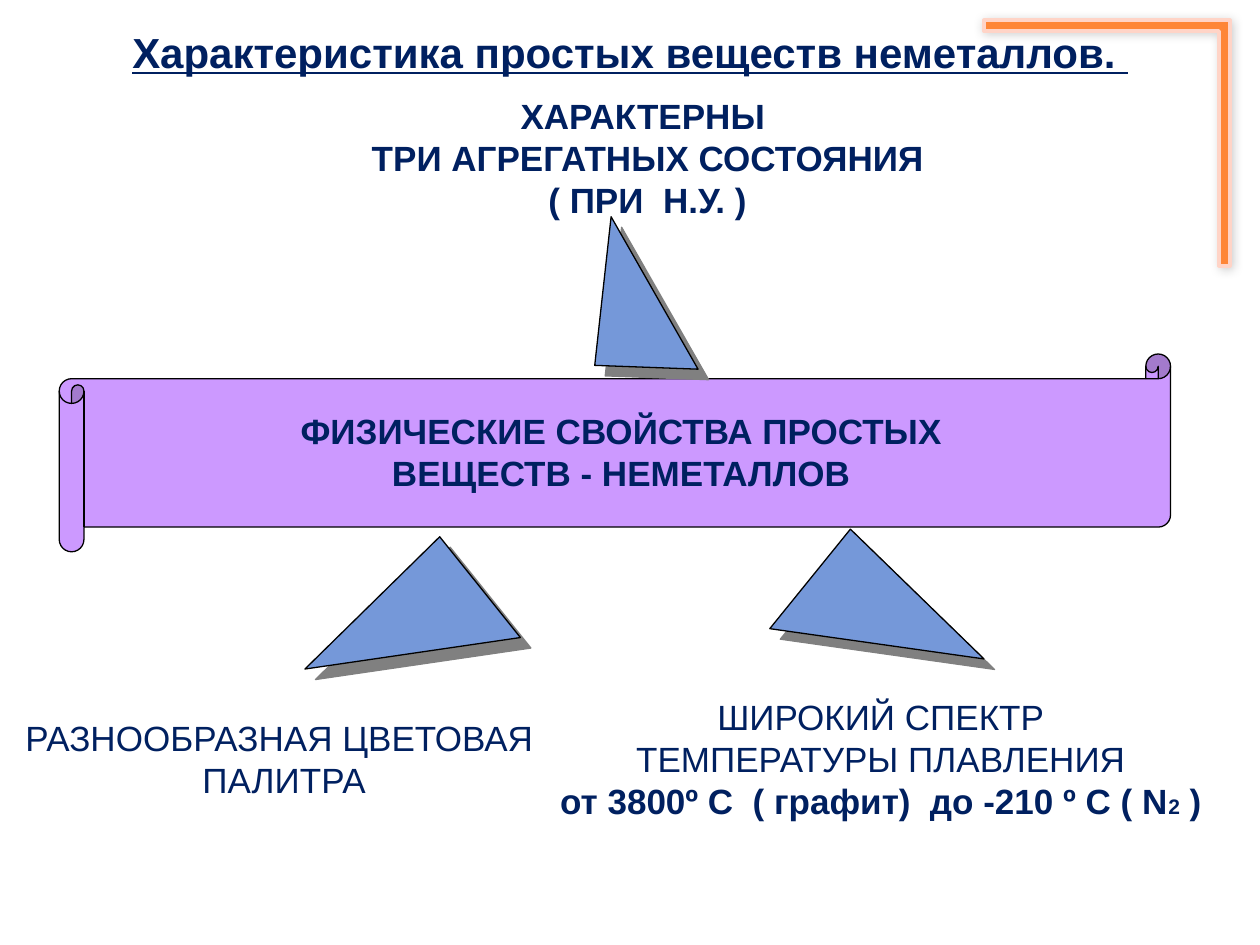
from lxml.etree import SubElement
from pptx import Presentation
from pptx.dml.color import RGBColor
from pptx.enum.shapes import MSO_SHAPE as Preset
from pptx.enum.text import MSO_AUTO_SIZE as AutoSize, PP_ALIGN as Align
from pptx.oxml.ns import qn
from pptx.util import Inches, Pt

CELL = 0.1  # inches: the slide is a grid of 100 columns by 75 rows
NAVY, BLUE, LILAC, ORANGE, PINK = "002060", "7598D9", "CC99FF", "FE8637", "FFD4C7"
BLACK, GRAY = "000000", "808080"


def color(value):
    return RGBColor.from_string(value)


def grid(*cells):
    return [Inches(cell * CELL) for cell in cells]


class SlideStyle:
    font = "Arial"
    size = 20

    def __init__(self, slide):
        self.shapes = slide.shapes

    def paint(self, shape, fill, line, width=0.75):
        shape.shadow.inherit = False
        shape.fill.solid()
        shape.fill.fore_color.rgb = color(fill)
        shape.line.color.rgb = color(line)
        shape.line.width = Pt(width)
        return shape

    def cast_shadow(self, shape, tone, opacity, blur, distance):
        effects = shape.element.spPr.find(qn("a:effectLst"))
        outer = SubElement(effects, qn("a:outerShdw"), blurRad=str(Pt(blur)),
                           dist=str(Pt(distance)), dir=str(45 * 60000),
                           algn="ctr", rotWithShape="0")
        tint = SubElement(outer, qn("a:srgbClr"), val=tone)
        SubElement(tint, qn("a:alpha"), val=str(opacity * 1000))

    def scroll(self, place, curl):
        shape = self.shapes.add_shape(Preset.HORIZONTAL_SCROLL, *grid(*place))
        shape.adjustments[0] = curl
        self.paint(shape, LILAC, BLACK)

    def corner(self, place, thickness):
        """The "corner" preset has no enum member, so its name is set in the XML."""
        shape = self.shapes.add_shape(Preset.RECTANGLE, *grid(*place))
        geometry = shape.element.spPr.find(qn("a:prstGeom"))
        geometry.set("prst", "corner")
        guides = geometry.find(qn("a:avLst"))
        for name in ("adj1", "adj2"):
            SubElement(guides, qn("a:gd"), name=name, fmla=f"val {round(thickness * 100000)}")
        shape.rotation = 180
        self.paint(shape, ORANGE, PINK, 2)
        self.cast_shadow(shape, BLACK, 20, 6, 1)

    def pointer(self, corners):
        points = [grid(*corner) for corner in corners]
        builder = self.shapes.build_freeform(*points[0])
        builder.add_line_segments(points[1:], close=True)
        triangle = self.paint(builder.convert_to_shape(), BLUE, BLACK)
        self.cast_shadow(triangle, GRAY, 100, 0, 8.5)

    def caption(self, place, lines, wrap=False, **base):
        """Each line is a list of (text, format changes) pieces."""
        frame = self.shapes.add_textbox(*grid(*place)).text_frame
        frame.word_wrap = wrap
        frame.auto_size = AutoSize.SHAPE_TO_FIT_TEXT
        for index, pieces in enumerate(lines):
            line = frame.add_paragraph() if index else frame.paragraphs[0]
            line.alignment = Align.CENTER
            for text, changes in pieces:
                run = line.add_run()
                run.text = text
                self.letter(run.font, **{**base, **changes})

    def letter(self, font, size=size, bold=False, underline=False):
        font.name, font.size = self.font, Pt(size)
        font.bold, font.underline = bold, underline
        font.color.rgb = color(NAVY)


def plain(*lines):
    return [[(line, {})] for line in lines]


def main():
    deck = Presentation()
    deck.slide_width, deck.slide_height = grid(100, 75)
    style = SlideStyle(deck.slides.add_slide(deck.slide_layouts[6]))

    # Central scroll with the topic
    style.scroll((4.7, 28.1, 88.2, 15.7), 0.125)
    style.caption((22.6, 32, 53.4, 7.7),
                  plain("ФИЗИЧЕСКИЕ СВОЙСТВА ПРОСТЫХ", "ВЕЩЕСТВ - НЕМЕТАЛЛОВ"), bold=True)

    # Pointers from the scroll to the three properties
    for corners in (
        [(47.2, 29), (48.5, 17.2), (55.4, 29.3)],
        [(34.9, 42.6), (24.2, 53.1), (41.3, 50.6)],
        [(61.1, 49.9), (78.1, 52.3), (67.5, 42)],
    ):
        style.pointer(corners)

    # Three properties
    style.caption((23.4, 7, 56, 11.1),
                  plain("ХАРАКТЕРНЫ ", "ТРИ АГРЕГАТНЫХ СОСТОЯНИЯ", "( ПРИ  Н.У. )"),
                  wrap=True, bold=True)
    style.caption((0.8, 56.4, 43.5, 7.7), plain("РАЗНООБРАЗНАЯ ЦВЕТОВАЯ ", "ПАЛИТРА"))
    melting_range = [("от 3800º С  ( графит)  до -210 º С ( N", {"bold": True}),
                     ("2", {"bold": True, "size": 12}),
                     (" )", {"bold": True})]
    style.caption((43, 54.7, 53.8, 11.1),
                  plain("ШИРОКИЙ СПЕКТР", "ТЕМПЕРАТУРЫ ПЛАВЛЕНИЯ") + [melting_range])

    # Title and corner ornament
    style.caption((0, 1.6, 100, 5), plain("Характеристика простых веществ неметаллов. "),
                  wrap=True, size=24, bold=True, underline=True)
    style.corner((78.1, 1.6, 19.5, 19.5), 0.044)

    deck.save("out.pptx")


if __name__ == "__main__":
    main()
